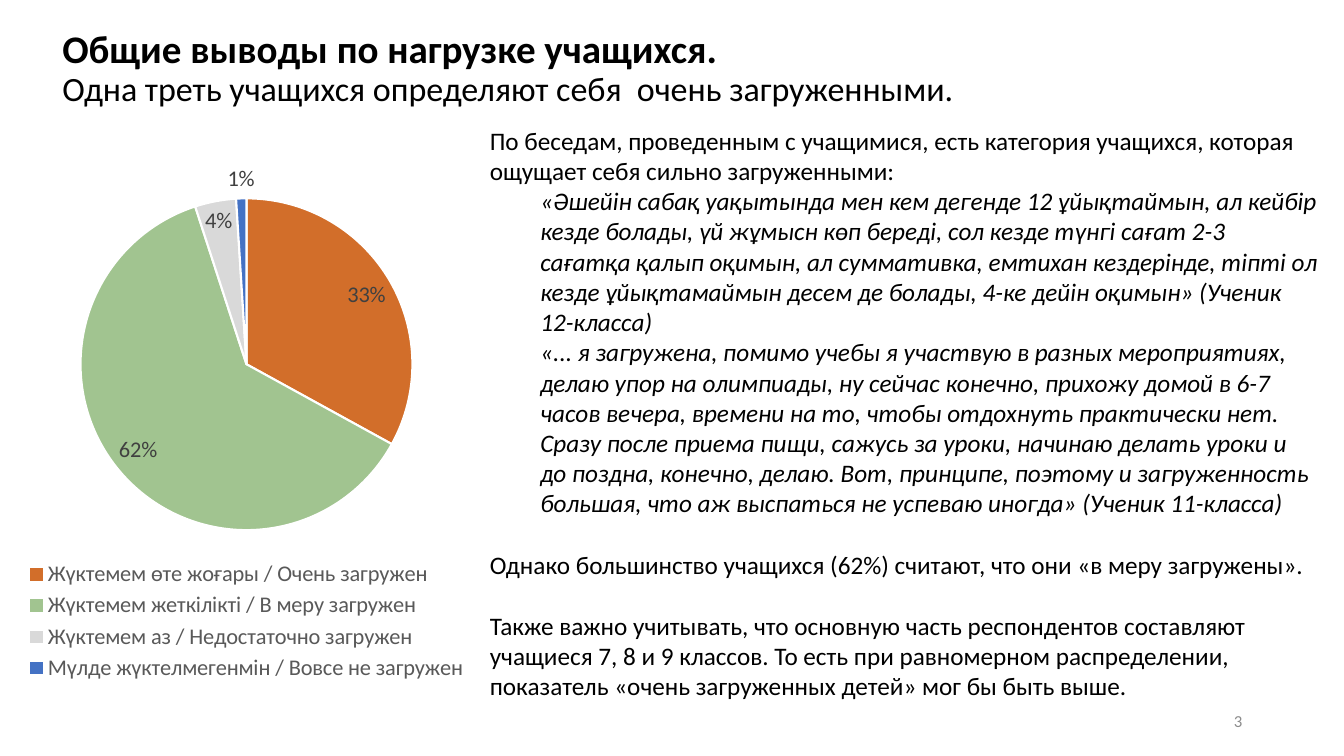
import pptx
import pptx.chart.data
import pptx.dml.color
import pptx.enum.chart
import pptx.enum.text
import pptx.oxml
import pptx.oxml.ns
import pptx.util

Inches = pptx.util.Inches
Pt = pptx.util.Pt
RGBColor = pptx.dml.color.RGBColor
Anchor = pptx.enum.text.MSO_ANCHOR
Align = pptx.enum.text.PP_ALIGN

BLACK = RGBColor(0x00, 0x00, 0x00)
WHITE = RGBColor(0xFF, 0xFF, 0xFF)
NUMBER_GRAY = RGBColor(0x8C, 0x8C, 0x8C)
LEGEND_GRAY = RGBColor(0x59, 0x59, 0x59)
LABEL_GRAY = RGBColor(0x40, 0x40, 0x40)
ORANGE = RGBColor(0xD2, 0x6E, 0x2A)
GREEN = RGBColor(0xA1, 0xC4, 0x90)
LIGHT_GRAY = RGBColor(0xD9, 0xD9, 0xD9)
BLUE = RGBColor(0x44, 0x72, 0xC4)

WORKLOAD = [
    ("Жүктемем өте жоғары / Очень загружен", 0.33, ORANGE),
    ("Жүктемем жеткілікті / В меру загружен", 0.62, GREEN),
    ("Жүктемем аз / Недостаточно загружен", 0.04, LIGHT_GRAY),
    ("Мүлде жүктелмегенмін / Вовсе не загружен", 0.01, BLUE),
]

TITLE = [
    ("Общие выводы по нагрузке учащихся. \v", {"size": Pt(27.9), "bold": True}),
    ("Одна треть учащихся определяют себя  очень загруженными.", {"size": Pt(24.3)}),
]

BODY = {"size": Pt(18)}
QUOTE = {"size": Pt(18), "italic": True}
INDENTED = {"level": 1}
SPACED = {"space_before": Pt(22)}

FINDINGS = [
    ("По беседам, проведенным с учащимися, есть категория учащихся, которая "
     "ощущает себя сильно загруженными:", BODY, {}),
    ("«Әшейін сабақ уақытында мен кем дегенде 12 ұйықтаймын, ал кейбір кезде "
     "болады, үй жұмысн көп береді, сол кезде түнгі сағат 2-3 сағатқа қалып "
     "оқимын, ал суммативка, емтихан кездерінде, тіпті ол кезде ұйықтамаймын "
     "десем де болады, 4-ке дейін оқимын» (Ученик 12-класса)", QUOTE, INDENTED),
    ("«... я загружена, помимо учебы я участвую в разных мероприятиях, делаю "
     "упор на олимпиады, ну сейчас конечно, прихожу домой в 6-7 часов вечера, "
     "времени на то, чтобы отдохнуть практически нет. Сразу после приема пищи, "
     "сажусь за уроки, начинаю делать уроки и до поздна, конечно, делаю. Вот, "
     "принципе, поэтому и загруженность большая, что аж выспаться не успеваю "
     "иногда» (Ученик 11-класса)", QUOTE, INDENTED),
    ("Однако большинство учащихся (62%) считают, что они «в меру загружены».",
     BODY, SPACED),
    ("Также важно учитывать, что основную часть респондентов составляют "
     "учащиеся 7, 8 и 9 классов. То есть при равномерном распределении, "
     "показатель «очень загруженных детей» мог бы быть выше.", BODY, SPACED),
]


def apply(target, values):
    for name, value in values.items():
        setattr(target, name, value)


def make_layout(x, y, width, height, inner=False):
    target = '<c:layoutTarget val="inner"/>' if inner else ""
    return pptx.oxml.parse_xml(
        f'<c:layout {pptx.oxml.ns.nsdecls("c")}><c:manualLayout>{target}'
        '<c:xMode val="edge"/><c:yMode val="edge"/>'
        f'<c:x val="{x}"/><c:y val="{y}"/><c:w val="{width}"/><c:h val="{height}"/>'
        '</c:manualLayout></c:layout>')


class SlideBuilder:
    font_name = "Calibri"

    def __init__(self, slide):
        self.slide = slide

    def style_font(self, font, color, **values):
        apply(font, {"name": self.font_name, **values})
        font.color.rgb = color

    def text_box(self, box, paragraphs, anchor=Anchor.TOP, color=BLACK):
        shape = self.slide.shapes.add_textbox(*map(Inches, box))
        frame = shape.text_frame
        apply(frame, {"word_wrap": True, "vertical_anchor": anchor})
        for index, (runs, values) in enumerate(paragraphs):
            paragraph = frame.add_paragraph() if index else frame.paragraphs[0]
            apply(paragraph, values)
            if paragraph.level:
                paragraph._p.get_or_add_pPr().set("marL", str(Inches(0.5)))
            for text, font_values in runs:
                pieces = text.split("\v")
                for position, piece in enumerate(pieces):
                    if position:
                        paragraph.add_line_break()
                    if piece:
                        run = paragraph.add_run()
                        run.text = piece
                        self.style_font(run.font, color, **font_values)

    def pie(self, box, sectors):
        data = pptx.chart.data.CategoryChartData(number_format="0%")
        data.categories = [name for name, value, color in sectors]
        data.add_series("Series 1", [value for name, value, color in sectors])
        chart = self.slide.shapes.add_chart(
            pptx.enum.chart.XL_CHART_TYPE.PIE, *map(Inches, box), data).chart
        apply(chart, {"has_title": False, "has_legend": True})
        self.style_font(chart.font, BLACK, size=Pt(16))
        legend = chart.legend
        apply(legend, {"position": pptx.enum.chart.XL_LEGEND_POSITION.BOTTOM,
                       "include_in_layout": False})
        self.style_font(legend.font, LEGEND_GRAY, size=Pt(16))
        plot = chart.plots[0]
        apply(plot, {"vary_by_categories": True, "has_data_labels": True})
        apply(plot.data_labels, {
            "show_value": True, "show_percentage": False,
            "number_format": "0%", "number_format_is_linked": False,
            "position": pptx.enum.chart.XL_LABEL_POSITION.BEST_FIT})
        self.style_font(plot.data_labels.font, LABEL_GRAY, size=Pt(16))
        for index, (name, value, color) in enumerate(sectors):
            sector = plot.series[0].points[index].format
            sector.fill.solid()
            sector.fill.fore_color.rgb = color
            sector.line.color.rgb = WHITE
            sector.line.width = Pt(1.5)
        plot_area = chart._chartSpace.chart.plotArea
        for layout in plot_area.findall(pptx.oxml.ns.qn("c:layout")):
            plot_area.remove(layout)
        plot_area.insert(0, make_layout(0.28, 0.09, 0.44, 0.62, inner=True))
        for layout in legend._element.findall(pptx.oxml.ns.qn("c:layout")):
            legend._element.remove(layout)
        legend._element.insert(1, make_layout(0.21, 0.76, 0.58, 0.24))


def main():
    presentation = pptx.Presentation()
    apply(presentation, {"slide_width": Inches(13.33), "slide_height": Inches(7.5)})
    slide = presentation.slides.add_slide(presentation.slide_layouts[6])
    builder = SlideBuilder(slide)
    builder.text_box((0.52, 0.33, 11.38, 0.71), [(TITLE, {"line_spacing": 0.9})],
                     Anchor.MIDDLE)
    builder.pie((-1.36, 1.49, 7.61, 5.31), WORKLOAD)
    builder.text_box((9.42, 6.95, 3, 0.4),
                     [([("3", {"size": Pt(12)})], {"alignment": Align.RIGHT})],
                     Anchor.MIDDLE, NUMBER_GRAY)
    builder.text_box((4.76, 1.19, 8.41, 5.86),
                     [([(text, font)], values) for text, font, values in FINDINGS])
    presentation.save("out.pptx")


if __name__ == "__main__":
    main()
